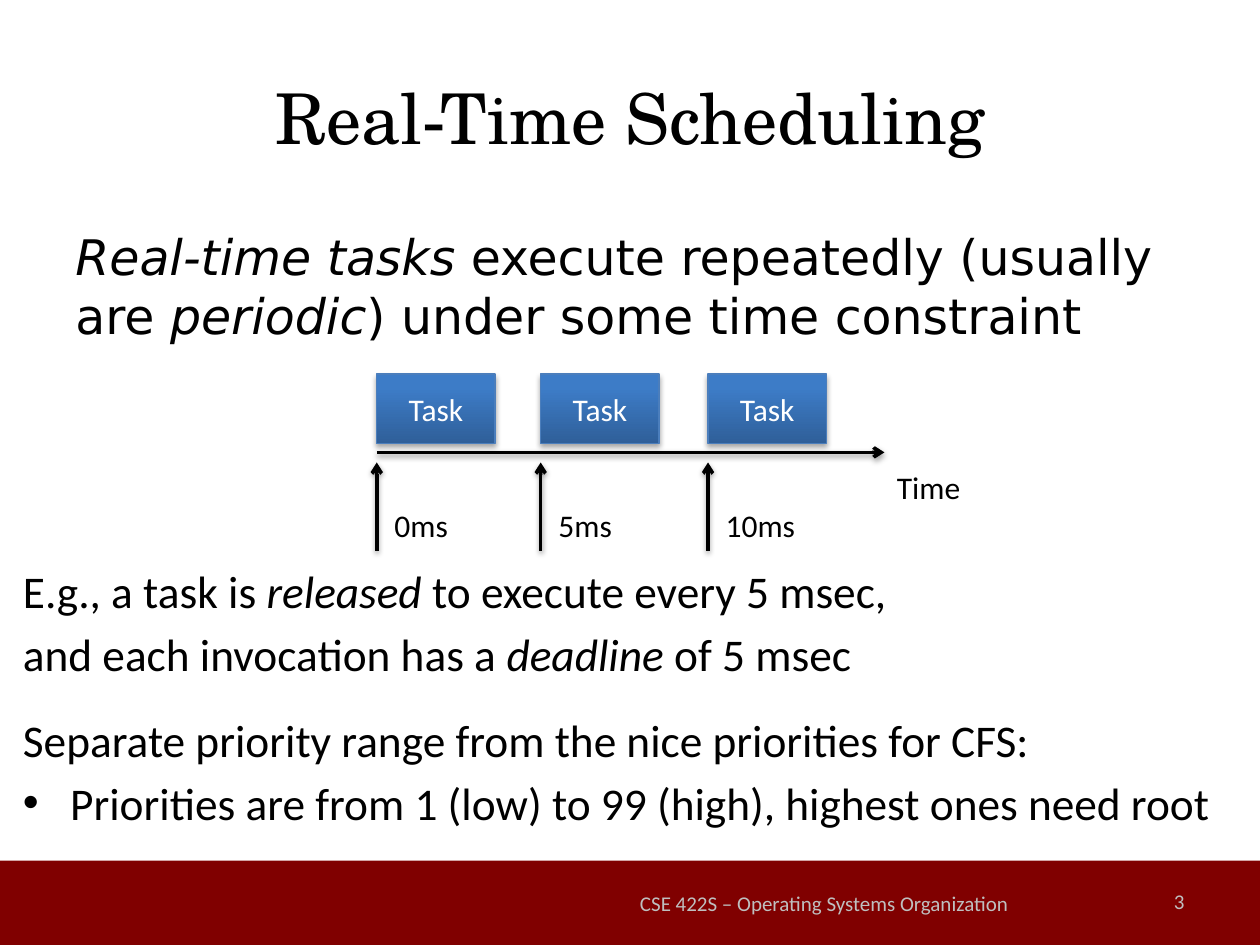
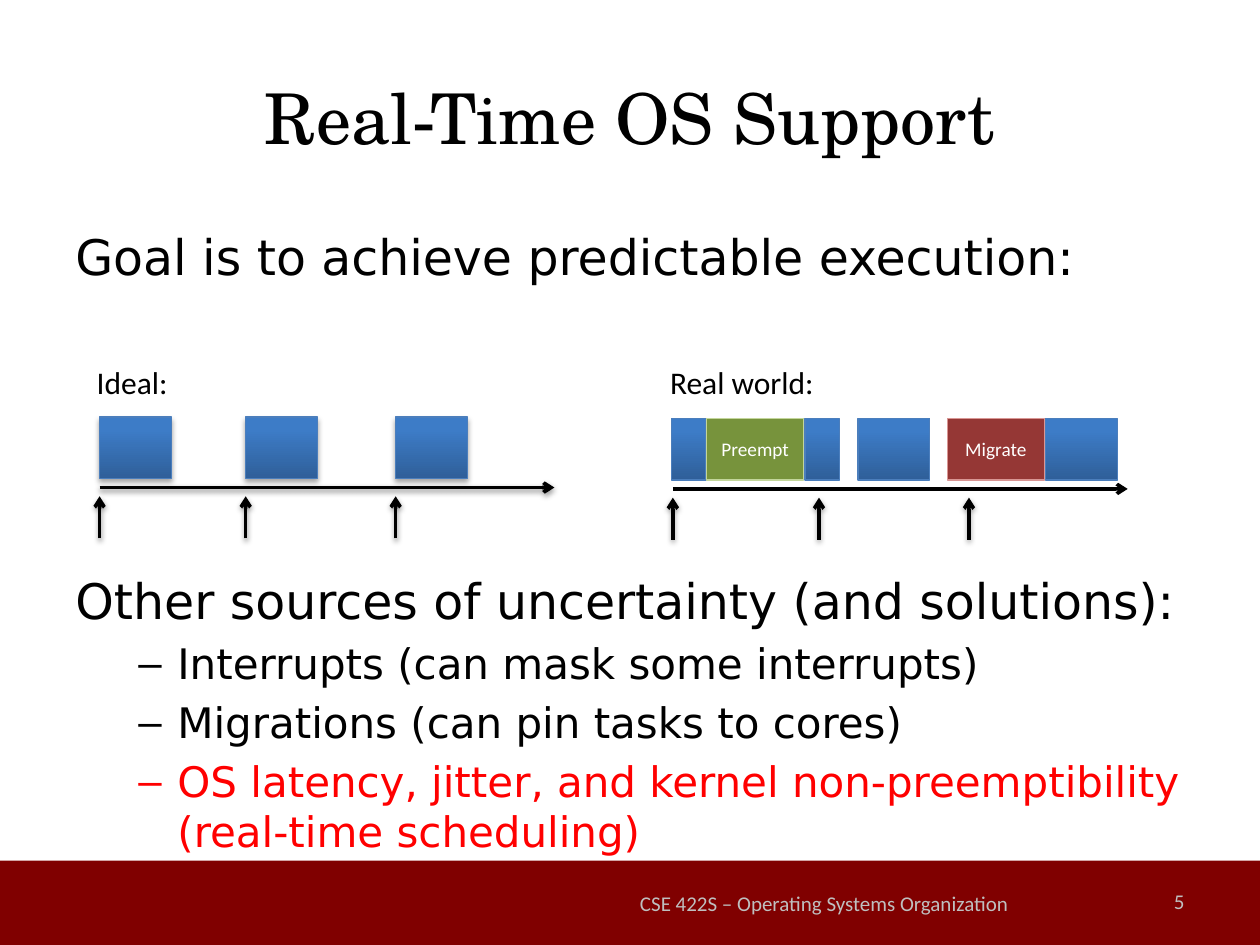
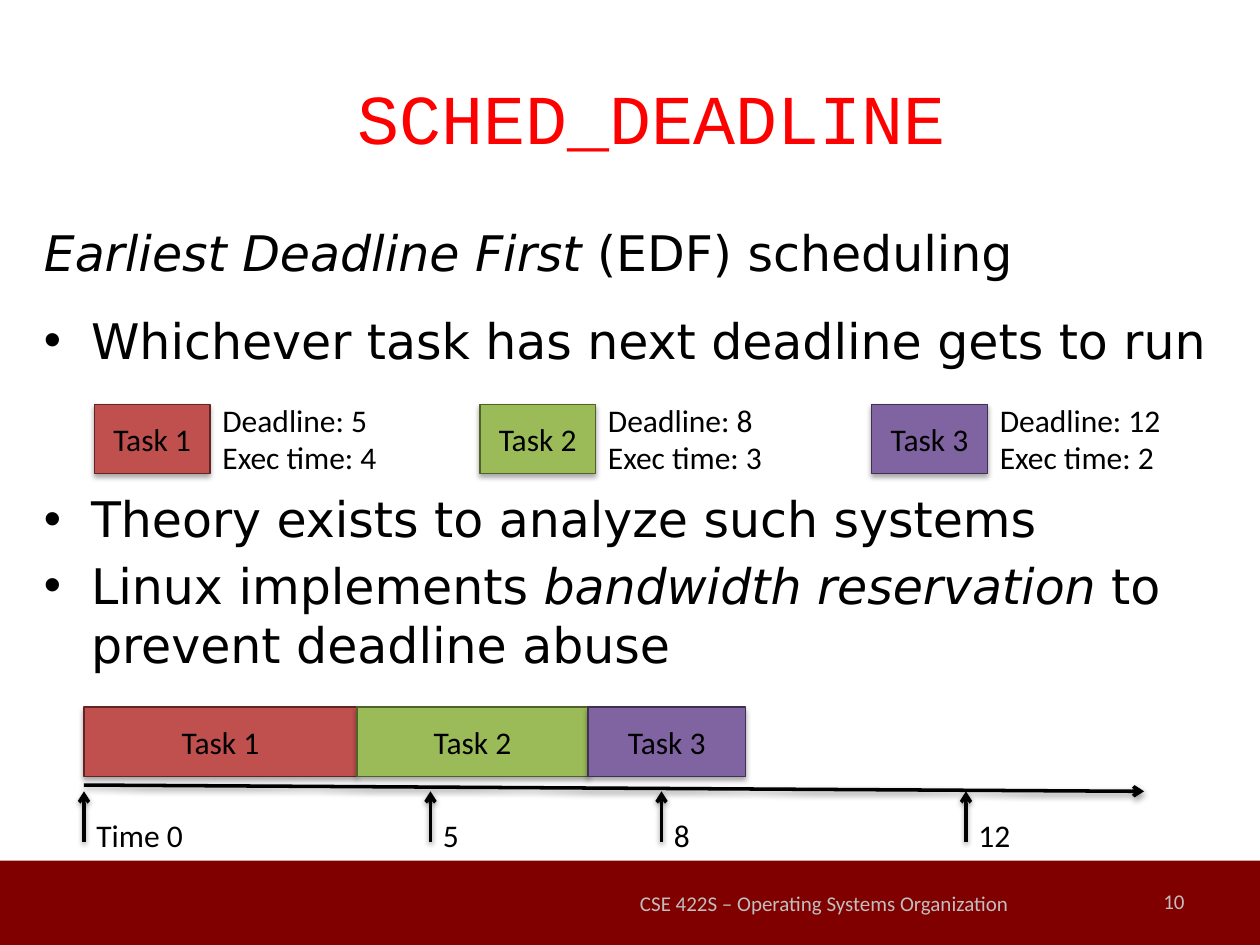
import pptx
import pptx.dml.color
import pptx.enum.shapes
import pptx.enum.text
import pptx.oxml
import pptx.oxml.ns
import pptx.util

Pt = pptx.util.Pt
ALIGN = pptx.enum.text.PP_ALIGN
MIDDLE = pptx.enum.text.MSO_ANCHOR.MIDDLE
RECTANGLE = pptx.enum.shapes.MSO_SHAPE.RECTANGLE

BLACK, WHITE, RED, GREY, MAROON = "000000", "FFFFFF", "FF0000", "BFBFBF", "800000"
BLUE = ("2F5F99", "3D7CC7")
BLUE_EDGE = "4B7EBC"
TASK_COLORS = [("C0504D", "632523"), ("9BBB59", "4F6228"), ("8064A2", "403152")]
BODY = dict(size=28, font="DejaVu Sans")
POINT = dict(bullet="•", left=27, hang=27)
BAND_TOP = 491.8
COURSE = "CSE 422S – Operating Systems Organization"


def rgb(color):
    return pptx.dml.color.RGBColor.from_string(color)


def add_element(parent, tag, inner="", **attributes):
    pairs = " ".join(f'{name}="{value}"' for name, value in attributes.items())
    xml = f'<a:{tag} {pptx.oxml.ns.nsdecls("a")} {pairs}>{inner}</a:{tag}>'
    parent.append(pptx.oxml.parse_xml(xml))


def add_shadow(effects, distance, opacity):
    add_element(effects, "outerShdw",
                f'<a:srgbClr val="000000"><a:alpha val="{opacity * 1000}"/></a:srgbClr>',
                blurRad=Pt(3.1), dist=Pt(distance), dir=5400000, rotWithShape=0)


def format_paragraph(paragraph, text, size=18, font="Calibri", color=BLACK, align=None,
                     before=0, bullet=None, left=0, hang=0):
    """Fill a paragraph; the parts of text between asterisks are italic."""
    if bullet:
        properties = paragraph._p.get_or_add_pPr()
        properties.set("marL", str(Pt(left)))
        properties.set("indent", str(-Pt(hang)))
        add_element(properties, "buFont", typeface="Arial")
        add_element(properties, "buChar", char=bullet)
    paragraph.alignment = align
    if before:
        paragraph.space_before = Pt(before)
    for index, part in enumerate(text.split("*")):
        if part:
            run = paragraph.add_run()
            run.text = part
            run.font.size = Pt(size)
            run.font.name = font
            run.font.italic = index % 2 == 1
            run.font.color.rgb = rgb(color)


def write(frame, lines, anchor=None, **style):
    """Write lines, each a string or a (string, own style) pair."""
    frame.word_wrap = True
    if anchor is not None:
        frame.vertical_anchor = anchor
    for index, line in enumerate(lines):
        text, own = (line, {}) if isinstance(line, str) else line
        paragraph = frame.add_paragraph() if index else frame.paragraphs[0]
        format_paragraph(paragraph, text, **{**style, **own})


def add_text(slide, x, y, width, height, *lines, **style):
    box = slide.shapes.add_textbox(Pt(x), Pt(y), Pt(width), Pt(height))
    write(box.text_frame, lines, **style)


def add_label(slide, x, y, *lines):
    add_text(slide, x, y, 115, 28.8 * len(lines), *lines)


def add_block(slide, x, y, width, height, text="", fill=BLUE, edge=BLUE_EDGE,
              shadow=True, color=WHITE, size=18):
    """Add a rectangle; a pair of fill colours runs from bottom to top."""
    block = slide.shapes.add_shape(RECTANGLE, Pt(x), Pt(y), Pt(width), Pt(height))
    block.shadow.inherit = False
    if isinstance(fill, tuple):
        block.fill.gradient()
        block.fill.gradient_angle = 90
        for stop, stop_color, position in zip(block.fill.gradient_stops, fill, (0, 0.8)):
            stop.color.rgb = rgb(stop_color)
            stop.position = position
    else:
        block.fill.solid()
        block.fill.fore_color.rgb = rgb(fill)
    if edge:
        block.line.color.rgb = rgb(edge)
        block.line.width = Pt(0.75)
    else:
        block.line.fill.background()
    if shadow:
        add_shadow(block.element.spPr.find(pptx.oxml.ns.qn("a:effectLst")), 1.8, 35)
    if text:
        write(block.text_frame, [text], MIDDLE, size=size, color=color, align=ALIGN.CENTER)


def add_arrow(slide, x1, y1, x2, y2, shadow=True):
    arrow = slide.shapes.add_connector(pptx.enum.shapes.MSO_CONNECTOR.STRAIGHT,
                                       Pt(x1), Pt(y1), Pt(x2), Pt(y2))
    arrow.line.color.rgb = rgb(BLACK)
    arrow.line.width = Pt(2)
    properties = arrow.element.spPr
    add_element(properties.find(pptx.oxml.ns.qn("a:ln")), "tailEnd", type="arrow")
    add_element(properties, "effectLst")
    if shadow:
        add_shadow(properties[-1], 1.6, 38)


def add_timeline(slide, y, end, releases, gap, length, drop=0, axis_shadow=True):
    """Draw the time axis and an upward arrow below it for each release."""
    add_arrow(slide, releases[0], y, end, y + drop, axis_shadow)
    for x in releases:
        add_arrow(slide, x, y + gap + length, x, y + gap)


def add_slide(deck, title, number, font="TeX Gyre Schola", color=BLACK, left=36):
    slide = deck.slides.add_slide(deck.slide_layouts[5])
    heading = slide.shapes.title
    heading.left, heading.top = Pt(left), Pt(21.6)
    heading.width, heading.height = Pt(648), Pt(90)
    write(heading.text_frame, [title], MIDDLE, size=40, font=font, color=color,
          align=ALIGN.CENTER)
    add_block(slide, 0, BAND_TOP, 720, 540 - BAND_TOP, fill=MAROON, edge=None, shadow=False)
    footer = dict(size=12, color=GREY, anchor=MIDDLE)
    add_text(slide, 294, BAND_TOP, 354, 540 - BAND_TOP, COURSE, align=ALIGN.CENTER, **footer)
    add_text(slide, 516, 500.4, 168, 28.8, str(number), align=ALIGN.RIGHT, **footer)
    return slide


def add_scheduling_slide(deck):
    slide = add_slide(deck, "Real-Time Scheduling", 3)
    add_text(slide, 36, 126, 660, 80, "*Real-time tasks* execute repeatedly (usually are "
             "*periodic*) under some time constraint", **BODY)
    releases = [215.3, 309, 404.6]
    add_timeline(slide, 258.5, 505.4, releases, gap=5.8, length=50.4)
    for x, time in zip(releases, ["0ms", "5ms", "10ms"]):
        add_block(slide, x, 213.8, 67.7, 39.6, "Task")
        add_label(slide, x + 3, 285.8, time)
    add_label(slide, 505.4, 264.2, "Time")
    near = dict(before=5)
    add_text(slide, 6, 318.2, 708, 165,
             "E.g., a task is *released* to execute every 5 msec,",
             ("and each invocation has a *deadline* of 5 msec", near),
             ("Separate priority range from the nice priorities for CFS:", dict(before=17.8)),
             ("Priorities are from 1 (low) to 99 (high), highest ones need root",
              {**near, **POINT}),
             size=25.9)


def add_support_slide(deck):
    slide = add_slide(deck, "Real-Time OS Support", 5)
    add_text(slide, 36, 126, 684, 45, "Goal is to achieve predictable execution:", **BODY)
    dash = dict(size=24, before=4.8, bullet="–", left=58.3, hang=22.3)
    add_text(slide, 36, 322.5, 684, 168,
             "Other sources of uncertainty (and solutions):",
             ("Interrupts (can mask some interrupts)", dash),
             ("Migrations (can pin tasks to cores)", dash),
             ("OS latency, jitter, and kernel non-preemptibility (real-time scheduling)",
              {**dash, "color": RED}), **BODY)

    ideal = [56.9, 140.4, 226.1]
    real_offset = 327.6
    add_label(slide, 48.2, 203.8, "Ideal:")
    add_timeline(slide, 278.6, 316.8, ideal, gap=5, length=24)
    for x in ideal:
        add_block(slide, x, 238.3, 41, 35.3)

    add_label(slide, 375.8, 203.8, "Real world:")
    add_timeline(slide, 279.4, 644.4, [x + real_offset for x in ideal], gap=5, length=24,
                 axis_shadow=False)
    for x, width in [(383.8, 19.6), (460, 19.6), (490.3, 41), (597.6, 41)]:
        add_block(slide, x, 239, width, 35.3, shadow=False)
    for x, name, fill, edge in [(403.9, "Preempt", "77933C", "C3D69B"),
                                (541.4, "Migrate", "953735", "D99694")]:
        add_block(slide, x, 239, 55.4, 35.3, name, fill, edge, shadow=False, size=11)


def add_deadline_slide(deck):
    slide = add_slide(deck, "SCHED_DEADLINE", 10, font="Courier New", color=RED, left=48)
    add_text(slide, 18, 123.8, 690, 95, "*Earliest Deadline First* (EDF) scheduling",
             ("Whichever task has next deadline gets to run", {**POINT, "before": 16.5}), **BODY)
    add_text(slide, 18, 275.8, 690, 118,
             ("Theory exists to analyze such systems", POINT),
             ("Linux implements *bandwidth reservation* to prevent deadline abuse",
              {**POINT, "before": 4.5}), **BODY)

    tasks = [(54, 5, 4, 156), (274.3, 8, 3, 132), (498.2, 12, 2, 90)]
    bar_left = 48
    for number, (x, deadline, execution, bar_width) in enumerate(tasks, 1):
        fill, edge = TASK_COLORS[number - 1]
        look = dict(text=f"Task {number}", fill=fill, edge=edge, color=BLACK)
        add_block(slide, x, 231, 66, 39.6, **look)
        add_label(slide, x + 66, 225.4, f"Deadline: {deadline}", f"Exec time: {execution}")
        add_block(slide, bar_left, 404, bar_width, 39.6, **look)
        bar_left += bar_width

    releases = [48, 246, 378, 552]
    add_timeline(slide, 448.6, 653.8, releases, gap=3.6, length=28.8, drop=3.6)
    for x, time in zip(releases, ["Time 0", "5", "8", "12"]):
        add_label(slide, x, 463, time)


def main():
    deck = pptx.Presentation()
    deck.slide_width, deck.slide_height = Pt(720), Pt(540)
    add_scheduling_slide(deck)
    add_support_slide(deck)
    add_deadline_slide(deck)
    deck.save("out.pptx")


if __name__ == "__main__":
    main()
